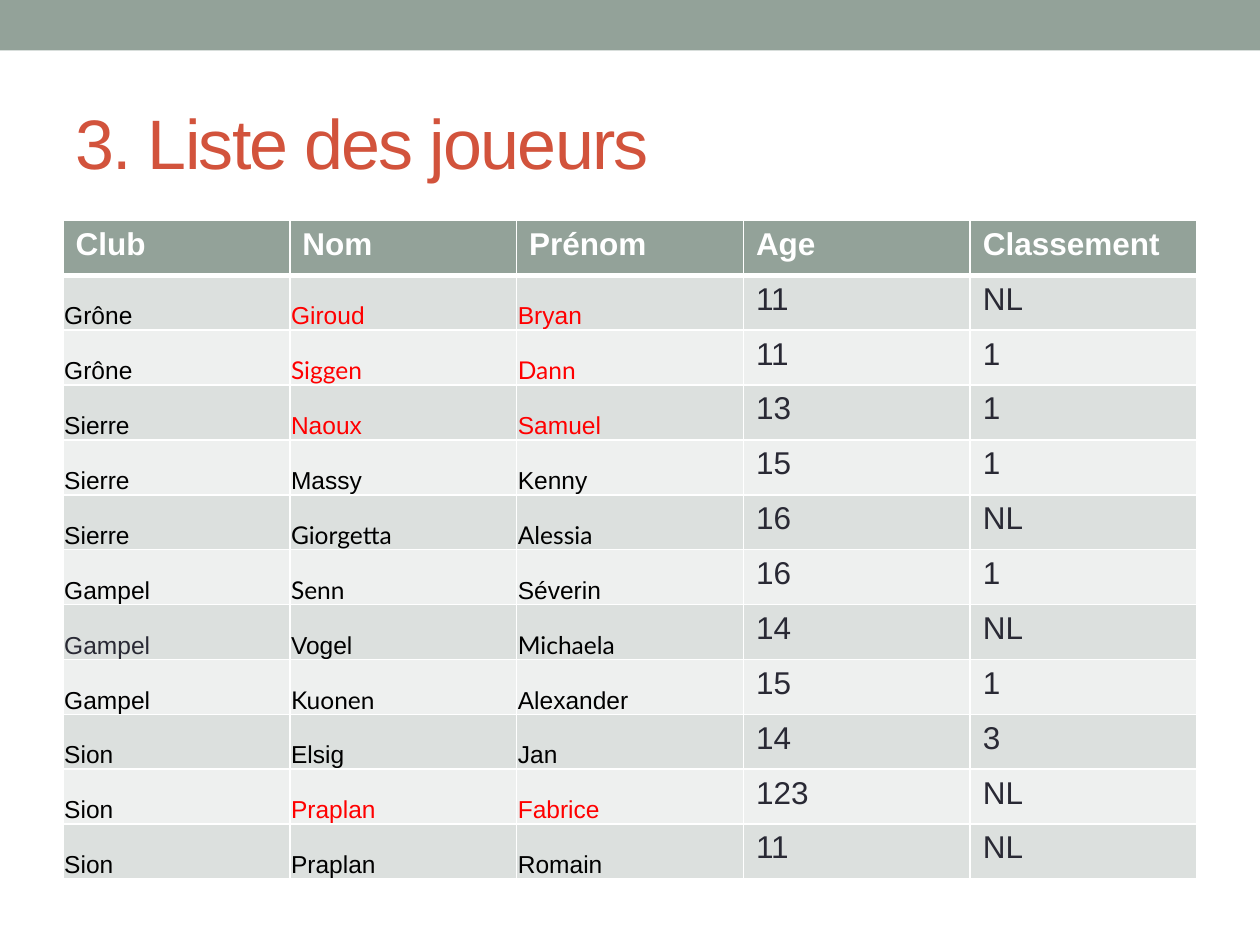
import pptx
import pptx.dml.color
import pptx.enum.shapes
import pptx.enum.text
import pptx.oxml.ns
import pptx.util
from lxml import etree

Pt = pptx.util.Pt
ANCHOR = pptx.enum.text.MSO_ANCHOR

COLORS = {
    "sage": "93A299",
    "rust": "D2533C",
    "band_dark": "DCE0DE",
    "band_light": "EEF0EF",
    "white": "FFFFFF",
    "black": "000000",
    "red": "FF0000",
    "slate": "292934",
}
HEADINGS = ["Club", "Nom", "Prénom", "Age", "Classement"]
PLAYERS = [
    ["Grône", "Giroud", "Bryan", "11", "NL"],
    ["Grône", "Siggen", "Dann", "11", "1"],
    ["Sierre", "Naoux", "Samuel", "13", "1"],
    ["Sierre", "Massy", "Kenny", "15", "1"],
    ["Sierre", "Giorgetta", "Alessia", "16", "NL"],
    ["Gampel", "Senn", "Séverin", "16", "1"],
    ["Gampel", "Vogel", "Michaela", "14", "NL"],
    ["Gampel", "Kuonen", "Alexander", "15", "1"],
    ["Sion", "Elsig", "Jan", "14", "3"],
    ["Sion", "Praplan", "Fabrice", "123", "NL"],
    ["Sion", "Praplan", "Romain", "11", "NL"],
]
RED_PLAYERS = {1, 2, 3, 10}
SLATE_CLUB = 7
LATO_NAMES = {"Siggen", "Dann", "Giorgetta", "Alessia", "Senn", "Michaela", "Kuonen"}


def rgb(color):
    """Return the named colour."""
    return pptx.dml.color.RGBColor.from_string(COLORS[color])


def paint(target, color):
    """Give a shape or cell a solid fill."""
    target.fill.solid()
    target.fill.fore_color.rgb = rgb(color)


def write(frame, words, size, color, font="Arial", bold=False):
    """Set the words of a text frame and return their run."""
    frame.text = words
    run = frame.paragraphs[0].runs[0]
    run.font.name = font
    run.font.size = Pt(size)
    run.font.bold = bold
    run.font.color.rgb = rgb(color)
    return run


def add_band(slide):
    """Add the band along the top edge."""
    band = slide.shapes.add_shape(
        pptx.enum.shapes.MSO_SHAPE.RECTANGLE, 0, 0, Pt(720), Pt(28.8))
    band.shadow.inherit = False
    paint(band, "sage")
    band.line.fill.background()


def add_title(slide, words):
    """Add the slide title with tightened letter spacing."""
    title = slide.shapes.add_textbox(Pt(36), Pt(41.76), Pt(648), Pt(77.76))
    title.text_frame.word_wrap = True
    title.text_frame.vertical_anchor = ANCHOR.MIDDLE
    run = write(title.text_frame, words, 40, "rust")
    run.font._element.set("spc", "-100")


def add_borders(cell, top, bottom):
    """Draw white cell borders with the given top and bottom widths."""
    properties = cell._tc.get_or_add_tcPr()
    for side, width in {"L": 1, "R": 1, "T": top, "B": bottom}.items():
        border = etree.SubElement(
            properties, pptx.oxml.ns.qn(f"a:ln{side}"), w=str(Pt(width)))
        fill = etree.SubElement(border, pptx.oxml.ns.qn("a:solidFill"))
        etree.SubElement(fill, pptx.oxml.ns.qn("a:srgbClr"), val=COLORS["white"])


def fill_heading(cell, words):
    """Fill one cell of the heading row."""
    add_borders(cell, 1, 3)
    paint(cell, "sage")
    write(cell.text_frame, words, 18, "white", bold=True)


def fill_player_cell(cell, words, row, column):
    """Fill one cell of a player's row."""
    add_borders(cell, 3 if row == 1 else 1, 1)
    paint(cell, "band_dark" if row % 2 else "band_light")
    if column > 2:
        write(cell.text_frame, words, 18, "slate")
        return
    cell.vertical_anchor = ANCHOR.BOTTOM
    cell.margin_left = cell.margin_right = cell.margin_top = Pt(0.72)
    cell.margin_bottom = 0
    color = "black"
    if column and row in RED_PLAYERS:
        color = "red"
    elif column == 0 and row == SLATE_CLUB:
        color = "slate"
    write(cell.text_frame, words, 14, color, "Lato" if words in LATO_NAMES else "Arial")


def add_players(slide):
    """Add the table of players."""
    row_height = Pt(31.36)
    row_count = len(PLAYERS) + 1
    players = slide.shapes.add_table(
        row_count, len(HEADINGS), Pt(36), Pt(126), Pt(648), row_height * row_count).table
    for row in players.rows:
        row.height = row_height
    for column, heading in enumerate(HEADINGS):
        fill_heading(players.cell(0, column), heading)
    for row, player in enumerate(PLAYERS, start=1):
        for column, words in enumerate(player):
            fill_player_cell(players.cell(row, column), words, row, column)


def main():
    """Build and save the slide."""
    deck = pptx.Presentation()
    deck.slide_width, deck.slide_height = Pt(720), Pt(540)
    slide = deck.slides.add_slide(deck.slide_layouts[6])
    add_band(slide)
    add_title(slide, "3. Liste des joueurs")
    add_players(slide)
    deck.save("out.pptx")


if __name__ == "__main__":
    main()
